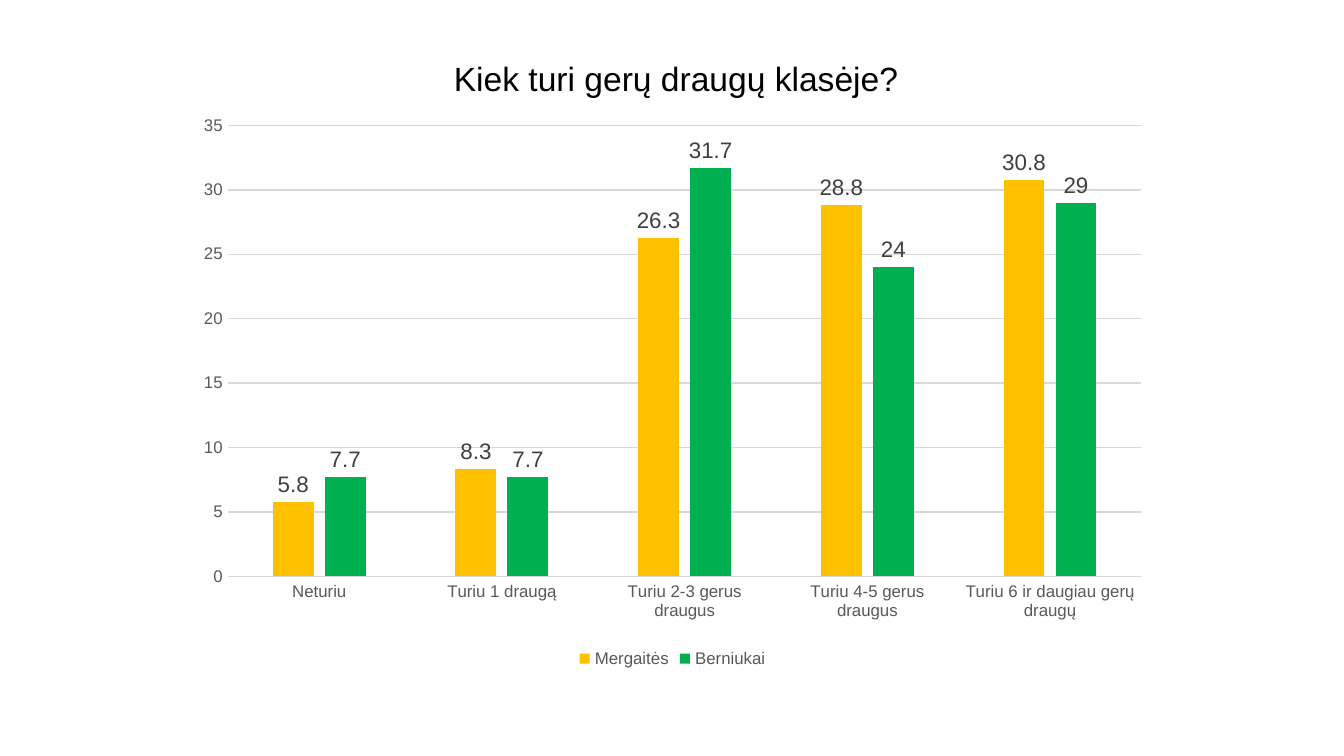
import pptx
import pptx.util
import pptx.dml.color
import pptx.chart.data
import pptx.enum.chart
import pptx.oxml
import pptx.oxml.ns

enum = pptx.enum.chart
qn = pptx.oxml.ns.qn
Pt = pptx.util.Pt
scale = 914400 / 134.4


def color(code):
    return pptx.dml.color.RGBColor.from_string(code)


def style(font, size, code):
    font.name = "Arial"
    font.size = Pt(size)
    font.bold = False
    font.color.rgb = color(code)


deck = pptx.Presentation()
deck.slide_width = round(1344 * scale)
deck.slide_height = round(756 * scale)
slide = deck.slides.add_slide(deck.slide_layouts[6])

data = pptx.chart.data.CategoryChartData()
data.categories = [
    "Neturiu",
    "Turiu 1 draugą",
    "Turiu 2-3 gerus draugus",
    "Turiu 4-5 gerus draugus",
    "Turiu 6 ir daugiau gerų draugų",
]
data.add_series("Mergaitės", [5.8, 8.3, 26.3, 28.8, 30.8])
data.add_series("Berniukai", [7.7, 7.7, 31.7, 24, 29])

box = [round(n * scale) for n in (184, 25, 977, 649)]
kind = enum.XL_CHART_TYPE.COLUMN_CLUSTERED
chart = slide.shapes.add_chart(kind, *box, data).chart
style(chart.font, 10, "000000")

chart.has_title = True
title = chart.chart_title
title.include_in_layout = False
title.text_frame.text = "Kiek turi gerų draugų klasėje?"
style(title.text_frame.paragraphs[0].font, 18, "000000")

chart.has_legend = True
chart.legend.position = enum.XL_LEGEND_POSITION.BOTTOM
chart.legend.include_in_layout = False
style(chart.legend.font, 9, "595959")

cats, vals = chart.category_axis, chart.value_axis
for axis in (cats, vals):
    axis.major_tick_mark = enum.XL_TICK_MARK.NONE
    axis.minor_tick_mark = enum.XL_TICK_MARK.NONE
    style(axis.tick_labels.font, 9, "595959")
vals.minimum_scale = 0
vals.maximum_scale = 35
vals.major_unit = 5
vals.has_major_gridlines = True
vals.format.line.fill.background()
for line in (cats.format.line, vals.major_gridlines.format.line):
    line.color.rgb = color("D9D9D9")
    line.width = Pt(0.75)

plot = chart.plots[0]
plot.gap_width = 219
plot.overlap = -27
plot.vary_by_categories = False
for series, code in zip(plot.series, ("FFC000", "00B050")):
    series.format.fill.solid()
    series.format.fill.fore_color.rgb = color(code)
    series.invert_if_negative = False
    labels = series.data_labels
    labels.show_value = True
    labels.position = enum.XL_LABEL_POSITION.OUTSIDE_END
    style(labels.font, 12, "404040")

area = chart.element.find(".//" + qn("c:plotArea"))
head = chart.element.find(".//" + qn("c:title"))
places = (
    (area, 0, '<c:layoutTarget val="inner"/>', {"x": 0.045, "y": 0.155, "w": 0.935, "h": 0.695}),
    (head, 1, "", {"x": 0.27, "y": 0.04}),
)
for part, index, target, sizes in places:
    for old in part.findall(qn("c:layout")):
        part.remove(old)
    modes = "".join(f'<c:{key}Mode val="edge"/>' for key in sizes if key in "xy")
    spots = "".join(f'<c:{key} val="{size}"/>' for key, size in sizes.items())
    layout = pptx.oxml.parse_xml(
        f'<c:layout {pptx.oxml.ns.nsdecls("c")}><c:manualLayout>'
        f"{target}{modes}{spots}</c:manualLayout></c:layout>"
    )
    part.insert(index, layout)

deck.save("out.pptx")
